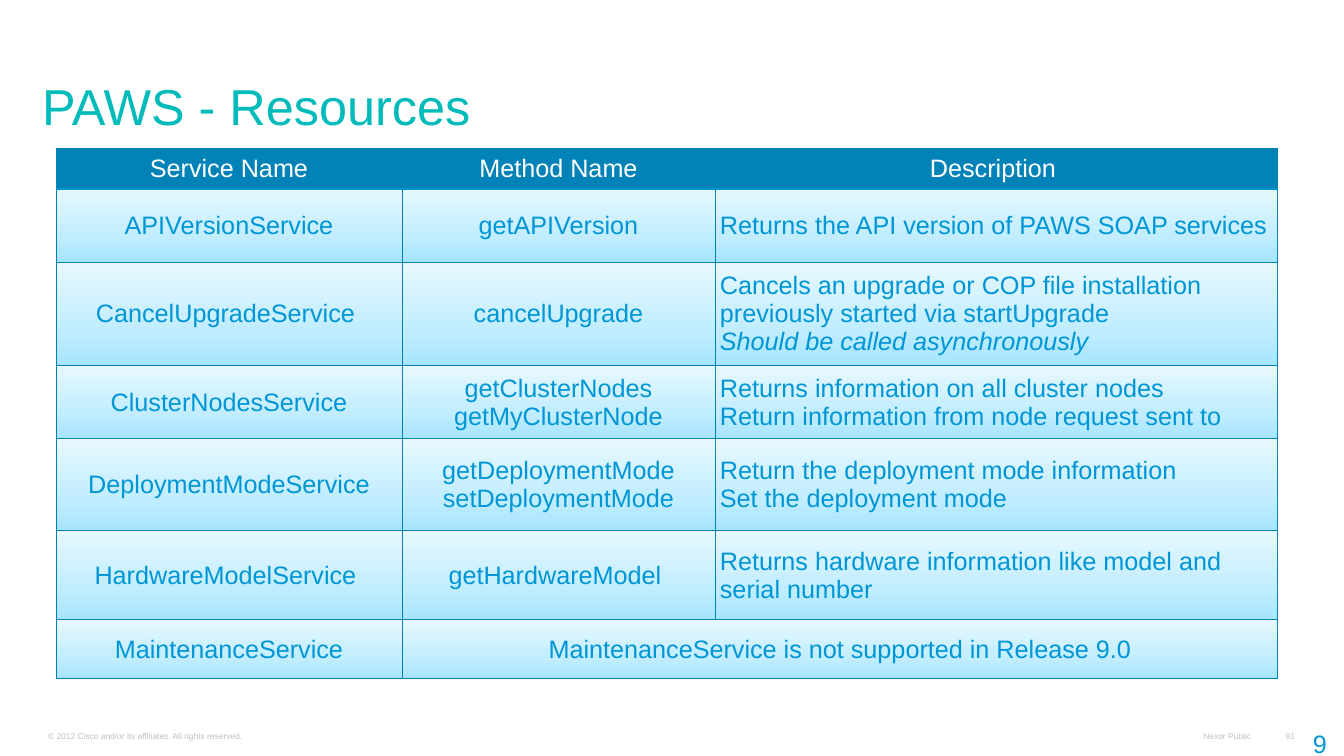
from dataclasses import dataclass

from lxml.etree import SubElement
from pptx import Presentation
from pptx.dml.color import RGBColor
from pptx.enum.text import MSO_ANCHOR, PP_ALIGN
from pptx.oxml.ns import qn
from pptx.util import Emu, Pt

EMU_PER_PX = 914400 / 100.8
FONT = "Arial"
BLUE, GRID, HEADER, WHITE, GREY = "0096D6", "0080B3", "0183B7", "FFFFFF", "C0C0C0"
CELL_STOPS = [(0, "E7F8FE"), (65, "C1EDFF"), (100, "A6E5FF")]
TITLE_STOPS = [(0, "0096D6"), (44, "01BBBB"), (100, "008041")]


@dataclass
class Label:
    text: str
    box: tuple[int, int, int, int]
    size: int
    color: str
    margins: tuple[int, int]
    align: PP_ALIGN = PP_ALIGN.LEFT
    anchor: MSO_ANCHOR = MSO_ANCHOR.BOTTOM
    wrap: bool = True


@dataclass
class Service:
    height: int
    name: str
    methods: str
    description: str = ""
    note: str = ""


LABELS = [
    Label("© 2012 Cisco and/or its affiliates. All rights reserved.",
          (39, 726, 503, 19), 6, GREY, (9, 4)),
    Label("Nexor Public", (1194, 726, 66, 19), 6, GREY, (9, 4), PP_ALIGN.RIGHT, wrap=False),
    Label("91", (1276, 726, 28, 19), 6, GREY, (9, 4), PP_ALIGN.RIGHT, wrap=False),
    Label("91", (1301, 722, 42, 40), 18, BLUE, (12, 6), anchor=MSO_ANCHOR.TOP),
]
COLUMNS = [346, 313, 563]
ROWS = [
    Service(41, "Service Name", "Method Name", "Description "),
    Service(73, "APIVersionService", "getAPIVersion",
            "Returns the API version of PAWS SOAP services"),
    Service(104, "CancelUpgradeService ", "cancelUpgrade",
            "Cancels an upgrade or COP file installation previously started via startUpgrade",
            "Should be called asynchronously"),
    Service(73, "ClusterNodesService", "getClusterNodes\ngetMyClusterNode",
            "Returns information on all cluster nodes\n"
            "Return information from node request sent to"),
    Service(92, "DeploymentModeService", "getDeploymentMode\nsetDeploymentMode",
            "Return the deployment mode information\nSet the deployment mode"),
    Service(89, "HardwareModelService ", "getHardwareModel ",
            "Returns hardware information like model and serial number"),
    Service(59, "MaintenanceService", "MaintenanceService is not supported in Release 9.0"),
]


def px(n: int) -> Emu:
    return Emu(round(n * EMU_PER_PX))


def rgb(color: str) -> RGBColor:
    return RGBColor.from_string(color)


def style(p, size: int, color: str, align=PP_ALIGN.LEFT, italic=False) -> None:
    p.alignment = align
    for r in p.runs:
        r.font.name, r.font.size = FONT, Pt(size)
        r.font.bold, r.font.italic = False, italic
        r.font.color.rgb = rgb(color)


def set_gradient(fill, stops: list[tuple[int, str]], angle: int, props) -> None:
    """Replace the fill inside props (cell or run properties) by a linear gradient."""
    fill.gradient()
    grad = props.find(qn("a:gradFill"))
    for child in list(grad):
        grad.remove(child)
    gs_list = SubElement(grad, qn("a:gsLst"))
    for pos, color in stops:
        gs = SubElement(gs_list, qn("a:gs"), pos=str(pos * 1000))
        SubElement(gs, qn("a:srgbClr"), val=color)
    SubElement(grad, qn("a:lin"), ang=str(angle * 60000), scaled="0")


def add_border(tc_pr, side: str, color: str, width: float) -> None:
    """Add one cell edge; a width of zero hides it."""
    ln = SubElement(tc_pr, qn(f"a:ln{side}"), w=str(Pt(width)))
    if width:
        SubElement(SubElement(ln, qn("a:solidFill")), qn("a:srgbClr"), val=color)
    else:
        SubElement(ln, qn("a:noFill"))


def set_margins(target, x: int, y: int) -> None:
    target.margin_left = target.margin_right = px(x)
    target.margin_top = target.margin_bottom = px(y)


def add_title(s, text: str) -> None:
    title = s.shapes.title
    title.left, title.top, title.width, title.height = map(px, (33, 47, 1262, 93))
    tf = title.text_frame
    tf.text = text
    tf.vertical_anchor = MSO_ANCHOR.BOTTOM
    set_margins(tf, 9, 5)
    p = tf.paragraphs[0]
    p.line_spacing = 0.8
    style(p, 36, TITLE_STOPS[1][1])
    font = p.runs[0].font
    set_gradient(font.fill, TITLE_STOPS, 80, p.runs[0]._r.get_or_add_rPr())


def add_label(s, label: Label) -> None:
    tf = s.shapes.add_textbox(*map(px, label.box)).text_frame
    tf.text = label.text
    tf.word_wrap = label.wrap
    tf.vertical_anchor = label.anchor
    set_margins(tf, *label.margins)
    style(tf.paragraphs[0], label.size, label.color, label.align)


def format_cell(cell, row: int, col: int) -> None:
    header = row == 0
    cell.vertical_anchor = MSO_ANCHOR.MIDDLE
    set_margins(cell, *((0, 0) if col < 2 else (5, 4)))
    tc_pr = cell._tc.get_or_add_tcPr()
    if not cell.is_spanned:
        add_border(tc_pr, "L", GRID, 0 if header and col > 0 else 0.75)
    add_border(tc_pr, "R", GRID, 0 if header and col < 2 else 0.75)
    add_border(tc_pr, "T", *((BLUE, 2) if row == 1 else (GRID, 0.75)))
    add_border(tc_pr, "B", *((BLUE, 2) if header else (GRID, 0.75)))
    if header:
        cell.fill.solid()
        cell.fill.fore_color.rgb = rgb(HEADER)
    else:
        set_gradient(cell.fill, CELL_STOPS, 90, tc_pr)


def add_services(s) -> None:
    heights = [service.height for service in ROWS]
    table = s.shapes.add_table(len(ROWS), len(COLUMNS), px(56), px(148),
                               px(sum(COLUMNS)), px(sum(heights))).table
    table.horz_banding = False
    for column, width in zip(table.columns, COLUMNS):
        column.width = px(width)
    for row, service in enumerate(ROWS):
        table.rows[row].height = px(service.height)
        if not service.description:
            table.cell(row, 1).merge(table.cell(row, 2))
        for col, text in enumerate((service.name, service.methods, service.description)):
            cell = table.cell(row, col)
            format_cell(cell, row, col)
            if not text:
                continue
            tf = cell.text_frame
            tf.text = text
            centred = row == 0 or col < 2
            for p in tf.paragraphs:
                style(p, 18, BLUE if row else WHITE,
                      PP_ALIGN.CENTER if centred else PP_ALIGN.LEFT)
            if col == 2 and service.note:
                p = tf.add_paragraph()
                p.text = service.note
                style(p, 18, BLUE, italic=True)


def main() -> None:
    prs = Presentation()
    prs.slide_width, prs.slide_height = px(1344), px(756)
    s = prs.slides.add_slide(prs.slide_layouts[5])
    add_title(s, "PAWS - Resources")
    for label in LABELS:
        add_label(s, label)
    add_services(s)
    prs.save("out.pptx")


if __name__ == "__main__":
    main()
